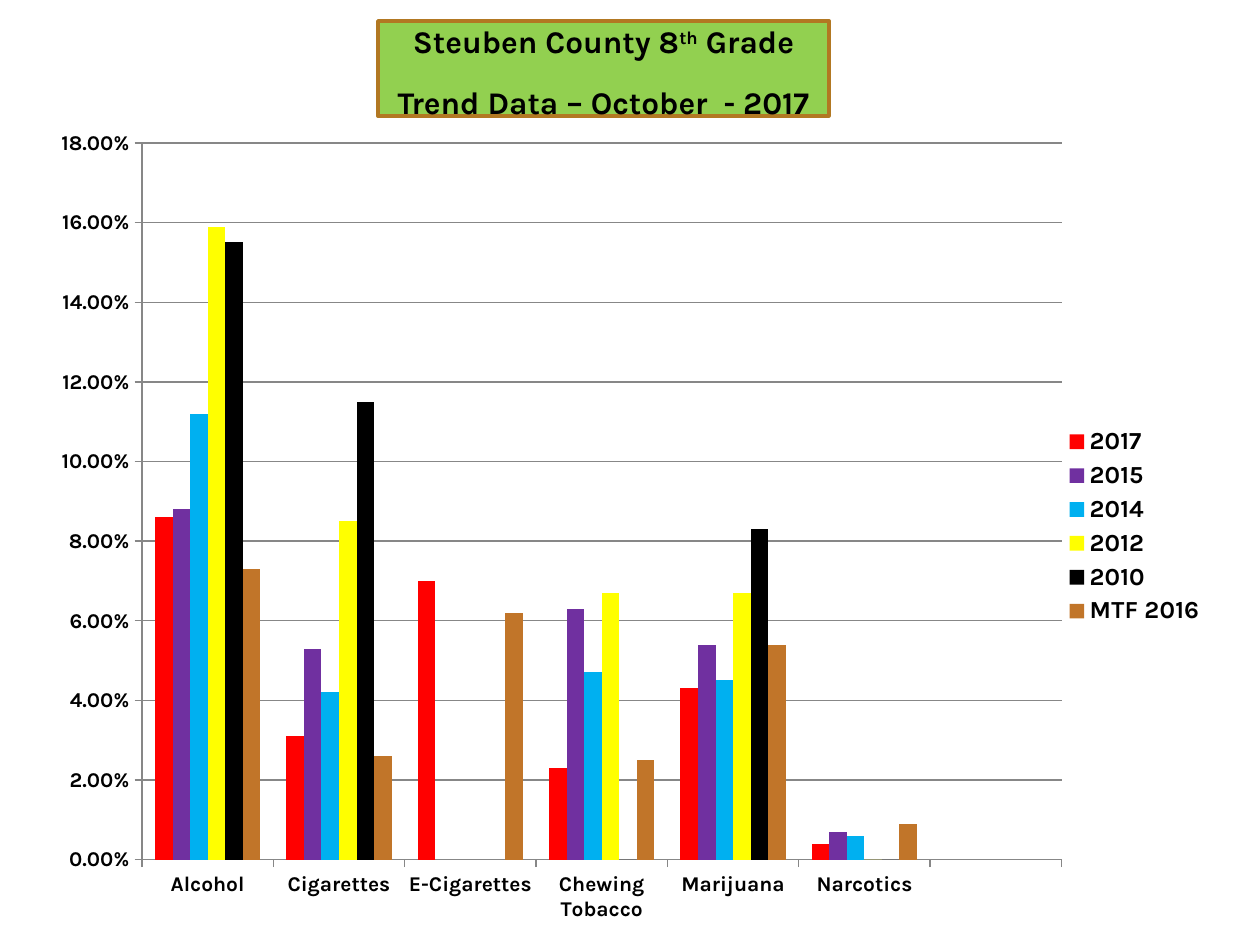
from dataclasses import dataclass

from pptx import Presentation
from pptx.chart.data import CategoryChartData
from pptx.dml.color import RGBColor
from pptx.enum.chart import XL_CHART_TYPE, XL_LEGEND_POSITION, XL_TICK_MARK
from pptx.enum.shapes import MSO_SHAPE
from pptx.enum.text import MSO_ANCHOR, PP_ALIGN
from pptx.oxml import parse_xml
from pptx.oxml.ns import nsdecls, qn
from pptx.util import Pt

PX = 914400 / 126


@dataclass(frozen=True)
class Theme:
    font: str = "Karla"
    text: str = "000000"
    banner_fill: str = "92D050"
    banner_line: str = "B27822"
    grid: str = "878787"
    title_size: int = 18
    axis_size: int = 12
    legend_size: int = 14


THEME = Theme()

SUBSTANCES = ["Alcohol", "Cigarettes", "E-Cigarettes", "Chewing Tobacco",
              "Marijuana", "Narcotics", ""]
SURVEYS = [
    ("2017", "FF0000", (0.086, 0.031, 0.07, 0.023, 0.043, 0.004, None)),
    ("2015", "7030A0", (0.088, 0.053, None, 0.063, 0.054, 0.007, None)),
    ("2014", "00B0F0", (0.112, 0.042, None, 0.047, 0.045, 0.006, None)),
    ("2012", "FFFF00", (0.159, 0.085, None, 0.067, 0.067, 0, None)),
    ("2010", "000000", (0.155, 0.115, None, 0, 0.083, 0, None)),
    ("MTF 2016", "C17529", (0.073, 0.026, 0.062, 0.025, 0.054, 0.009, None)),
]


def emu(*lengths):
    return [round(length * PX) for length in lengths]


def style_font(font, size):
    font.name = THEME.font
    font.size = Pt(size)
    font.bold = True
    font.color.rgb = RGBColor.from_string(THEME.text)


def style_line(line, color, width):
    line.color.rgb = RGBColor.from_string(color)
    line.width = Pt(width)


def set_plot_layout(chart, left, top, width, height):
    """Fix the inner plot area, in fractions of the chart."""
    plot_area = chart.element.find(".//" + qn("c:plotArea"))
    for layout in plot_area.findall(qn("c:layout")):
        plot_area.remove(layout)
    places = "".join(
        f'<c:{name} val="{value}"/>'
        for name, value in (("x", left), ("y", top), ("w", width), ("h", height)))
    plot_area.insert(0, parse_xml(
        f'<c:layout {nsdecls("c")}><c:manualLayout><c:layoutTarget val="inner"/>'
        f'<c:xMode val="edge"/><c:yMode val="edge"/>{places}'
        '</c:manualLayout></c:layout>'))


def add_trend_chart(slide, box):
    data = CategoryChartData(number_format="0.00%")
    data.categories = SUBSTANCES
    for name, _, values in SURVEYS:
        data.add_series(name, values)
    chart = slide.shapes.add_chart(
        XL_CHART_TYPE.COLUMN_CLUSTERED, *emu(*box), data).chart
    chart.has_title = False
    style_font(chart.font, THEME.axis_size)
    set_plot_layout(chart, 0.085, 0.026, 0.782, 0.886)

    plot = chart.plots[0]
    plot.gap_width = 150
    plot.overlap = 0
    plot.vary_by_categories = False
    for series, (_, color, _) in zip(plot.series, SURVEYS):
        series.invert_if_negative = False
        series.format.fill.solid()
        series.format.fill.fore_color.rgb = RGBColor.from_string(color)

    for axis in (chart.category_axis, chart.value_axis):
        axis.major_tick_mark = XL_TICK_MARK.OUTSIDE
        axis.minor_tick_mark = XL_TICK_MARK.NONE
        style_font(axis.tick_labels.font, THEME.axis_size)
        style_line(axis.format.line, THEME.grid, 0.75)
    scale = chart.value_axis
    scale.minimum_scale, scale.maximum_scale, scale.major_unit = 0, 0.18, 0.02
    scale.tick_labels.number_format = "0.00%"
    scale.tick_labels.number_format_is_linked = False
    scale.has_major_gridlines = True
    style_line(scale.major_gridlines.format.line, THEME.grid, 0.75)

    chart.has_legend = True
    chart.legend.position = XL_LEGEND_POSITION.RIGHT
    chart.legend.include_in_layout = False
    style_font(chart.legend.font, THEME.legend_size)


def add_title_banner(slide, box):
    banner = slide.shapes.add_shape(MSO_SHAPE.RECTANGLE, *emu(*box))
    banner.shadow.inherit = False
    banner.fill.solid()
    banner.fill.fore_color.rgb = RGBColor.from_string(THEME.banner_fill)
    style_line(banner.line, THEME.banner_line, 2)
    frame = banner.text_frame
    frame.word_wrap = True
    frame.vertical_anchor = MSO_ANCHOR.MIDDLE
    frame.text = "Steuben County 8\nTrend Data – October  - 2017"
    grade_line = frame.paragraphs[0]
    ordinal = grade_line.add_run()
    ordinal.text = "th"
    ordinal.font._element.set("baseline", "30000")
    grade_line.add_run().text = " Grade"
    for para in frame.paragraphs:
        para.alignment = PP_ALIGN.CENTER
        para.line_spacing = 1.15
        para.space_after = Pt(10)
        for span in para.runs:
            style_font(span.font, THEME.title_size)


def main():
    deck = Presentation()
    deck.slide_width, deck.slide_height = emu(1260, 945)
    slide = deck.slides.add_slide(deck.slide_layouts[6])
    add_trend_chart(slide, (42, 122, 1176, 809))
    add_title_banner(slide, (378, 21, 451, 95))
    deck.save("out.pptx")


if __name__ == "__main__":
    main()
